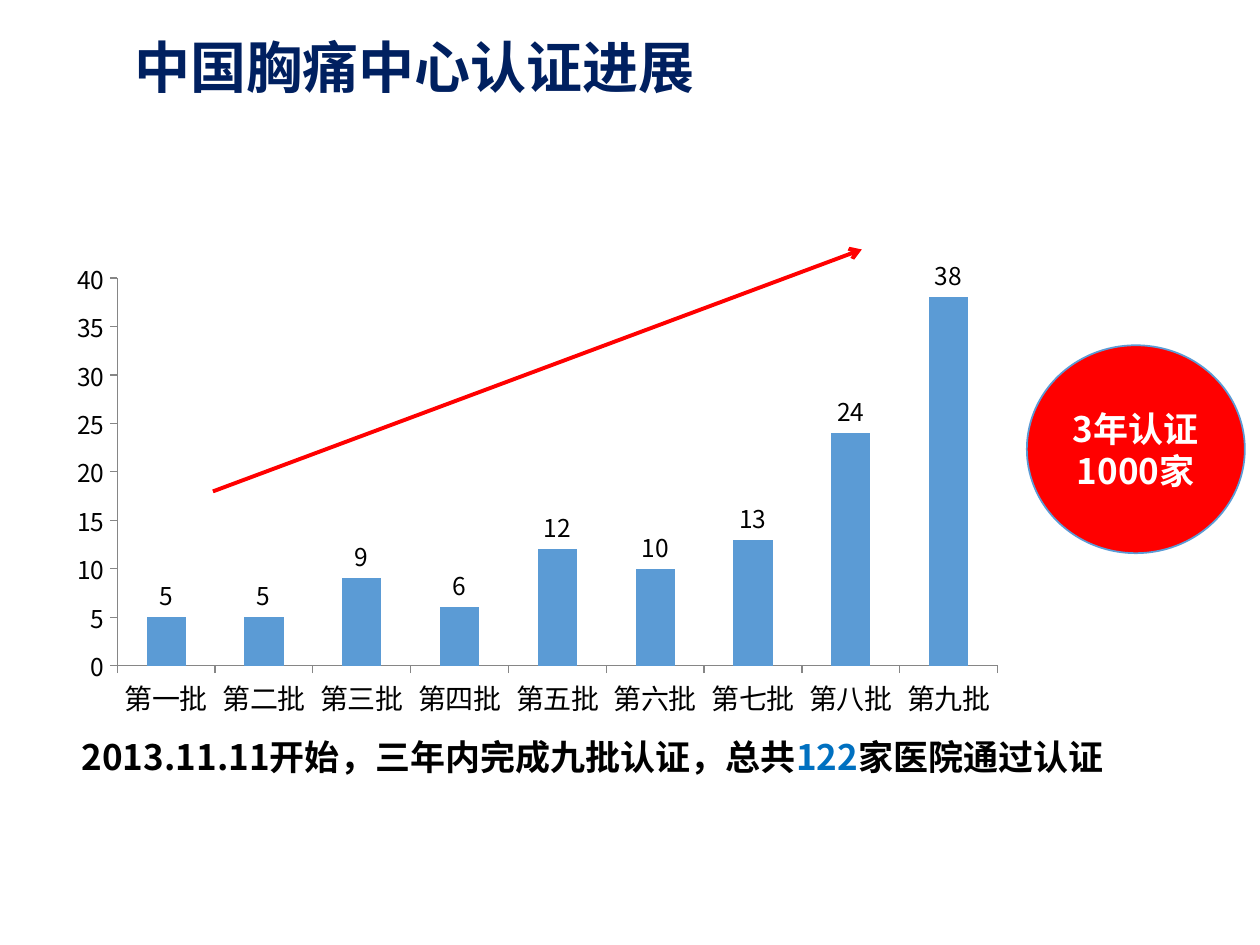
from lxml import etree
from pptx import Presentation
from pptx.chart import data
from pptx.dml.color import RGBColor
from pptx.enum import chart as ch, shapes, text
from pptx.oxml.ns import qn
from pptx.util import Inches, Pt

FONT = "Noto Sans CJK SC"
NAVY = RGBColor(0x00, 0x20, 0x60)
BLACK = RGBColor(0x00, 0x00, 0x00)
WHITE = RGBColor(0xFF, 0xFF, 0xFF)
GRAY = RGBColor(0x86, 0x86, 0x86)
BLUE = RGBColor(0x00, 0x70, 0xC0)
BAR = RGBColor(0x5B, 0x9B, 0xD5)
RED = RGBColor(0xFF, 0x00, 0x00)


def set_font(font, size, color, bold=False):
    font.size, font.bold, font.name = Pt(size), bold, FONT
    font.color.rgb = color
    # Chinese glyphs take the East Asian typeface
    latin = font._element.find(qn("a:latin"))
    east = etree.Element(qn("a:ea"), typeface=FONT)
    latin.addnext(east)


def add_run(para, words, size, color):
    run = para.add_run()
    run.text = words
    set_font(run.font, size, color, True)


def place(shape, box):
    shape.left, shape.top, shape.width, shape.height = map(Inches, box)


def add_title(slide, box):
    title = slide.shapes.title
    place(title, box)
    frame = title.text_frame
    frame.vertical_anchor = text.MSO_ANCHOR.MIDDLE
    para = frame.paragraphs[0]
    para.alignment = text.PP_ALIGN.LEFT
    para.line_spacing = 0.9
    add_run(para, "中国胸痛中心认证进展", 32, NAVY)


def add_note(slide, box):
    frame = slide.shapes.add_textbox(*map(Inches, box)).text_frame
    frame.word_wrap = True
    frame.auto_size = text.MSO_AUTO_SIZE.SHAPE_TO_FIT_TEXT
    para = frame.paragraphs[0]
    for words, color in (
        ("2013.11.11开始，三年内完成九批认证，总共", BLACK),
        ("122", BLUE),
        ("家医院通过认证", BLACK),
    ):
        add_run(para, words, 20, color)


def add_bars(slide, box):
    feed = data.CategoryChartData()
    feed.categories = [f"第{n}批" for n in "一二三四五六七八九"]
    feed.add_series("Series 1", (5, 5, 9, 6, 12, 10, 13, 24, 38))
    kind = ch.XL_CHART_TYPE.COLUMN_CLUSTERED
    chart = slide.shapes.add_chart(kind, *map(Inches, box), feed).chart
    chart.has_legend = chart.has_title = False
    set_font(chart.font, 14, BLACK)

    # Axes
    for axis, size in ((chart.category_axis, 16), (chart.value_axis, 14)):
        axis.has_major_gridlines = False
        axis.major_tick_mark = ch.XL_TICK_MARK.OUTSIDE
        axis.minor_tick_mark = ch.XL_TICK_MARK.NONE
        axis.format.line.color.rgb = GRAY
        axis.format.line.width = Pt(0.75)
        set_font(axis.tick_labels.font, size, BLACK)
    chart.value_axis.minimum_scale = 0
    chart.value_axis.maximum_scale = 40
    chart.value_axis.major_unit = 5

    # Bars and their values
    plot = chart.plots[0]
    plot.gap_width = 150
    plot.vary_by_categories = False
    fill = plot.series[0].format.fill
    fill.solid()
    fill.fore_color.rgb = BAR
    plot.has_data_labels = True
    labels = plot.data_labels
    labels.show_value = True
    labels.position = ch.XL_LABEL_POSITION.OUTSIDE_END
    set_font(labels.font, 14, BLACK)


def add_trend(slide, start, end):
    arrow = slide.shapes.add_connector(
        shapes.MSO_CONNECTOR.STRAIGHT, *map(Inches, start + end))
    arrow.line.color.rgb = RED
    arrow.line.width = Pt(2.25)
    etree.SubElement(arrow.line._get_or_add_ln(), qn("a:tailEnd"), type="arrow")
    etree.SubElement(arrow._element.spPr, qn("a:effectLst"))


def add_goal(slide, box):
    disc = slide.shapes.add_shape(shapes.MSO_SHAPE.OVAL, *map(Inches, box))
    disc.shadow.inherit = False
    disc.fill.solid()
    disc.fill.fore_color.rgb = RED
    disc.line.color.rgb = BAR
    disc.line.width = Pt(1)
    frame = disc.text_frame
    frame.word_wrap = True
    frame.vertical_anchor = text.MSO_ANCHOR.MIDDLE
    for i, words in enumerate(("3年认证", "1000家")):
        para = frame.add_paragraph() if i else frame.paragraphs[0]
        para.alignment = text.PP_ALIGN.CENTER
        add_run(para, words, 20, WHITE)


def main():
    deck = Presentation()
    deck.slide_width, deck.slide_height = Inches(10), Inches(7.5)
    slide = deck.slides.add_slide(deck.slide_layouts[5])
    add_title(slide, (0.97, 0.01, 9.03, 1.09))
    add_note(slide, (0.55, 5.79, 8.54, 0.44))
    add_bars(slide, (0.46, 1.99, 7.61, 3.78))
    add_trend(slide, (1.69, 3.9), (6.84, 1.98))
    add_goal(slide, (8.15, 2.74, 1.73, 1.65))
    deck.save("out.pptx")


if __name__ == "__main__":
    main()
